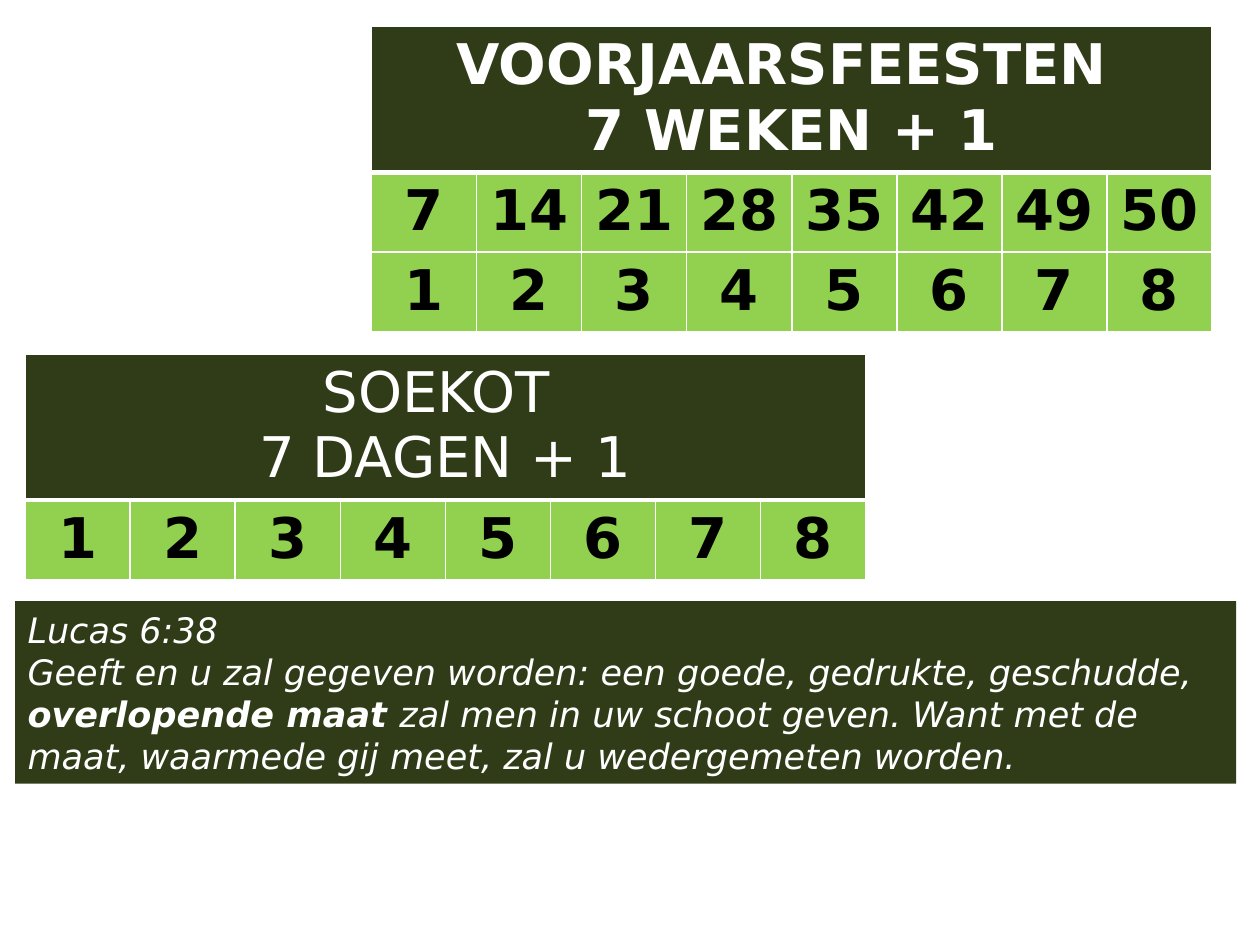
from dataclasses import dataclass

from lxml.etree import SubElement
from pptx import Presentation
from pptx.dml.color import RGBColor
from pptx.enum.shapes import MSO_SHAPE
from pptx.enum.text import MSO_AUTO_SIZE, PP_ALIGN
from pptx.oxml.ns import qn
from pptx.util import Inches, Pt


@dataclass(frozen=True)
class Theme:
    font: str = "DejaVu Sans"
    dark: str = "303C18"
    green: str = "92D050"
    white: str = "FFFFFF"
    black: str = "000000"
    table_size: int = 32
    verse_size: int = 20
    border: int = 1
    header_border: int = 3


@dataclass(frozen=True)
class FeastTable:
    left: float
    top: float
    heading: str
    heading_bold: bool
    rows: tuple


THEME = Theme()
COLUMNS = 8
TABLE_WIDTH = 6.67
HEADER_HEIGHT = 1.16
ROW_HEIGHT = 0.63
COUNT = tuple(range(1, COLUMNS + 1))
WEEKS = tuple(7 * week for week in COUNT[:-1]) + (50,)

FEASTS = (
    FeastTable(2.95, 0.21, "VOORJAARSFEESTEN \n7 WEKEN + 1", True, (WEEKS, COUNT)),
    FeastTable(0.2, 2.81, "SOEKOT \n7 DAGEN + 1", False, (COUNT,)),
)
VERSE = (
    (("Lucas 6:38", False),),
    (
        ("Geeft en u zal gegeven worden: een goede, gedrukte, geschudde, ", False),
        ("overlopende maat ", True),
        ("zal men in uw schoot geven. Want met de maat, waarmede gij meet, "
         "zal u wedergemeten worden.", False),
    ),
)


def set_borders(cell, bottom: int) -> None:
    properties = cell._tc.get_or_add_tcPr()
    widths = {"a:lnL": THEME.border, "a:lnR": THEME.border,
              "a:lnT": THEME.border, "a:lnB": bottom}
    for tag, width in widths.items():
        line = SubElement(properties, qn(tag), w=str(Pt(width)))
        fill = SubElement(line, qn("a:solidFill"))
        SubElement(fill, qn("a:srgbClr"), val=THEME.white)


def style_font(font, size: int, color: str) -> None:
    font.name = THEME.font
    font.size = Pt(size)
    font.color.rgb = RGBColor.from_string(color)


def fill_cell(cell, text: str, fill: str, color: str, bold: bool, bottom: int) -> None:
    set_borders(cell, bottom)
    cell.fill.solid()
    cell.fill.fore_color.rgb = RGBColor.from_string(fill)
    cell.text = text
    for paragraph in cell.text_frame.paragraphs:
        paragraph.alignment = PP_ALIGN.CENTER
        style_font(paragraph.font, THEME.table_size, color)
        paragraph.font.bold = bold


def add_feast_table(slide, feast: FeastTable) -> None:
    height = HEADER_HEIGHT + ROW_HEIGHT * len(feast.rows)
    table = slide.shapes.add_table(
        len(feast.rows) + 1, COLUMNS, Inches(feast.left), Inches(feast.top),
        Inches(TABLE_WIDTH), Inches(height)).table
    table.horz_banding = False
    for row in table.rows:
        row.height = Inches(ROW_HEIGHT)
    table.rows[0].height = Inches(HEADER_HEIGHT)

    header = table.cell(0, 0)
    header.merge(table.cell(0, COLUMNS - 1))
    fill_cell(header, feast.heading, THEME.dark, THEME.white,
              feast.heading_bold, THEME.header_border)
    for row_index, numbers in enumerate(feast.rows, start=1):
        for column, number in enumerate(numbers):
            fill_cell(table.cell(row_index, column), str(number),
                      THEME.green, THEME.black, True, THEME.border)


def add_verse(slide) -> None:
    shape = slide.shapes.add_shape(
        MSO_SHAPE.RECTANGLE, Inches(0.12), Inches(4.77), Inches(9.69), Inches(1.45))
    shape.shadow.inherit = False
    shape.fill.solid()
    shape.fill.fore_color.rgb = RGBColor.from_string(THEME.dark)
    shape.line.fill.background()
    frame = shape.text_frame
    frame.word_wrap = True
    frame.auto_size = MSO_AUTO_SIZE.SHAPE_TO_FIT_TEXT
    for index, runs in enumerate(VERSE):
        paragraph = frame.add_paragraph() if index else frame.paragraphs[0]
        paragraph.alignment = PP_ALIGN.LEFT
        style_font(paragraph.font, THEME.verse_size, THEME.white)
        paragraph.font.italic = True
        for text, bold in runs:
            run = paragraph.add_run()
            run.text = text
            run.font.bold = bold


def main() -> None:
    presentation = Presentation()
    presentation.slide_width = Inches(10)
    presentation.slide_height = Inches(7.5)
    slide = presentation.slides.add_slide(presentation.slide_layouts[6])
    for feast in FEASTS:
        add_feast_table(slide, feast)
    add_verse(slide)
    presentation.save("out.pptx")


if __name__ == "__main__":
    main()
